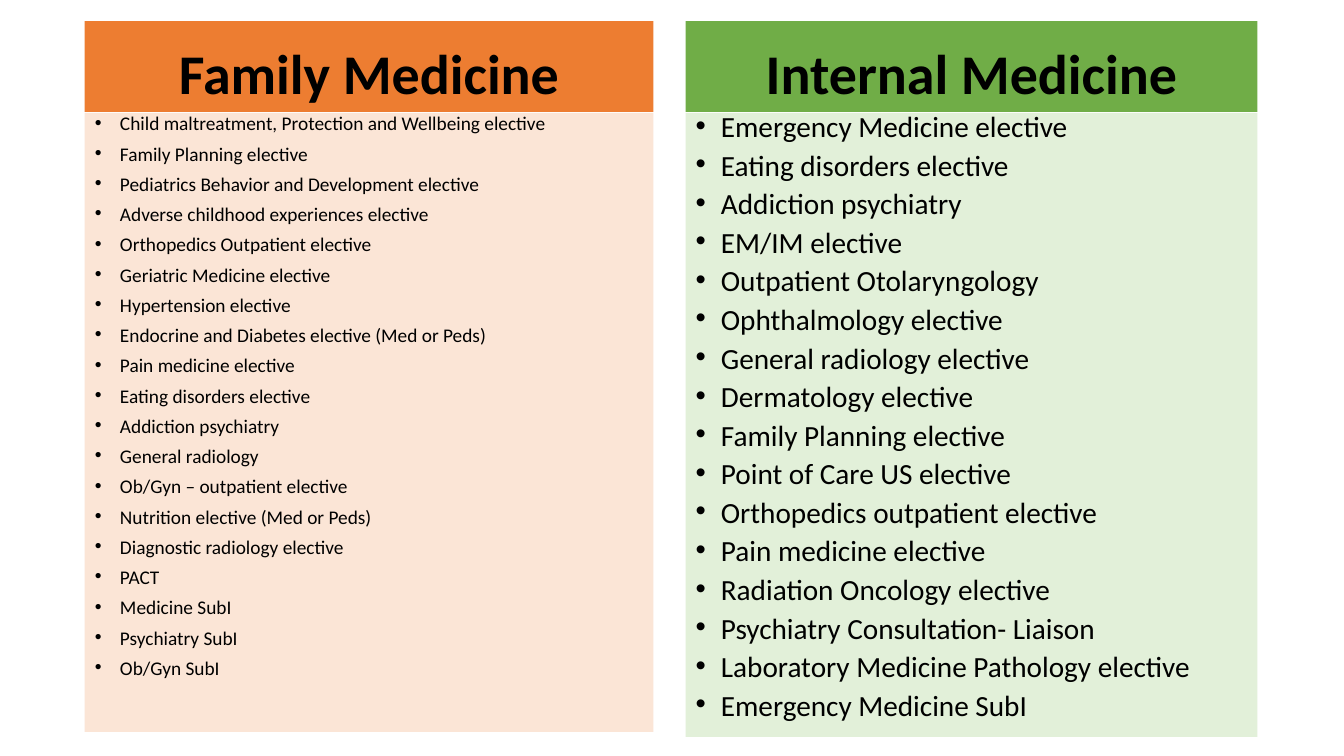
from dataclasses import dataclass

from lxml import etree
from pptx import Presentation
from pptx.dml.color import RGBColor
from pptx.enum.text import MSO_ANCHOR, MSO_AUTO_SIZE, PP_ALIGN
from pptx.oxml.ns import qn
from pptx.shapes.placeholder import SlidePlaceholder
from pptx.slide import Slide
from pptx.text.text import _Paragraph
from pptx.util import Inches, Pt

CENTER, LEFT = PP_ALIGN.CENTER, PP_ALIGN.LEFT
TOP, BOTTOM = MSO_ANCHOR.TOP, MSO_ANCHOR.BOTTOM
NO_AUTOFIT = MSO_AUTO_SIZE.NONE

COLORS = {
    "text": "000000",
    "orange": "ED7D31",
    "pale orange": "FBE5D6",
    "green": "70AD47",
    "pale green": "E2F0D9",
}
FONT = "Calibri"
COMPARISON_LAYOUT = 4
HEADING_TOP, HEADING_HEIGHT = 0.21, 0.9
LIST_TOP = 1.12
BULLET_INDENT = 0.25


@dataclass
class Column:
    heading: str
    electives: list[str]
    left: float
    width: float
    list_height: float
    list_size: float
    heading_color: str
    list_color: str
    heading_index: int
    list_index: int


COLUMNS = [
    Column(
        "Family Medicine",
        [
            "Child maltreatment, Protection and Wellbeing elective",
            "Family Planning elective",
            "Pediatrics Behavior and Development elective",
            "Adverse childhood experiences elective",
            "Orthopedics Outpatient elective",
            "Geriatric Medicine elective",
            "Hypertension elective",
            "Endocrine and Diabetes elective (Med or Peds)",
            "Pain medicine elective",
            "Eating disorders elective",
            "Addiction psychiatry",
            "General radiology",
            "Ob/Gyn – outpatient elective",
            "Nutrition elective (Med or Peds)",
            "Diagnostic radiology elective",
            "PACT",
            "Medicine SubI",
            "Psychiatry SubI",
            "Ob/Gyn SubI",
        ],
        left=0.84, width=5.64, list_height=6.14, list_size=13.8,
        heading_color="orange", list_color="pale orange",
        heading_index=1, list_index=2,
    ),
    Column(
        "Internal Medicine",
        [
            "Emergency Medicine elective",
            "Eating disorders elective",
            "Addiction psychiatry",
            "EM/IM elective",
            "Outpatient Otolaryngology",
            "Ophthalmology elective",
            "General radiology elective",
            "Dermatology elective",
            "Family Planning elective",
            "Point of Care US elective",
            "Orthopedics outpatient elective",
            "Pain medicine elective",
            "Radiation Oncology elective",
            "Psychiatry Consultation- Liaison",
            "Laboratory Medicine Pathology elective",
            "Emergency Medicine SubI",
        ],
        left=6.8, width=5.67, list_height=6.19, list_size=20.9,
        heading_color="green", list_color="pale green",
        heading_index=3, list_index=4,
    ),
]


def format_panel(shape: SlidePlaceholder, column: Column, top: float,
                 height: float, color: str, anchor: MSO_ANCHOR) -> None:
    """Move a placeholder into its column and fill it."""
    shape.left, shape.top = Inches(column.left), Inches(top)
    shape.width, shape.height = Inches(column.width), Inches(height)
    shape.fill.solid()
    shape.fill.fore_color.rgb = RGBColor.from_string(COLORS[color])
    shape.text_frame.word_wrap = True
    shape.text_frame.auto_size = NO_AUTOFIT
    shape.text_frame.vertical_anchor = anchor


def write_paragraph(paragraph: _Paragraph, text: str, size: float, bold: bool,
                    alignment: PP_ALIGN, line_spacing: float) -> None:
    paragraph.alignment = alignment
    paragraph.line_spacing = line_spacing
    paragraph.space_before = Pt(10)
    run = paragraph.add_run()
    run.text = text
    run.font.name = FONT
    run.font.size = Pt(size)
    run.font.bold = bold
    run.font.color.rgb = RGBColor.from_string(COLORS["text"])


def add_bullet(paragraph: _Paragraph) -> None:
    properties = paragraph._p.get_or_add_pPr()
    properties.set("marL", str(Inches(BULLET_INDENT)))
    properties.set("indent", str(-Inches(BULLET_INDENT)))
    etree.SubElement(properties, qn("a:buFont")).set("typeface", "Arial")
    etree.SubElement(properties, qn("a:buChar")).set("char", "•")


def draw_column(slide: Slide, column: Column) -> None:
    heading = slide.placeholders[column.heading_index]
    format_panel(heading, column, HEADING_TOP, HEADING_HEIGHT,
                 column.heading_color, BOTTOM)
    write_paragraph(heading.text_frame.paragraphs[0], column.heading,
                    40, True, CENTER, 0.9)

    listing = slide.placeholders[column.list_index]
    format_panel(listing, column, LIST_TOP, column.list_height,
                 column.list_color, TOP)
    frame = listing.text_frame
    for position, elective in enumerate(column.electives):
        paragraph = frame.add_paragraph() if position else frame.paragraphs[0]
        write_paragraph(paragraph, elective, column.list_size, False, LEFT, 0.7)
        add_bullet(paragraph)


def main() -> None:
    presentation = Presentation()
    presentation.slide_width = Inches(13.33)
    presentation.slide_height = Inches(7.5)
    layout = presentation.slide_layouts[COMPARISON_LAYOUT]
    slide = presentation.slides.add_slide(layout)
    empty_title = slide.shapes.title.element
    empty_title.getparent().remove(empty_title)
    for column in COLUMNS:
        draw_column(slide, column)
    presentation.save("out.pptx")


if __name__ == "__main__":
    main()
